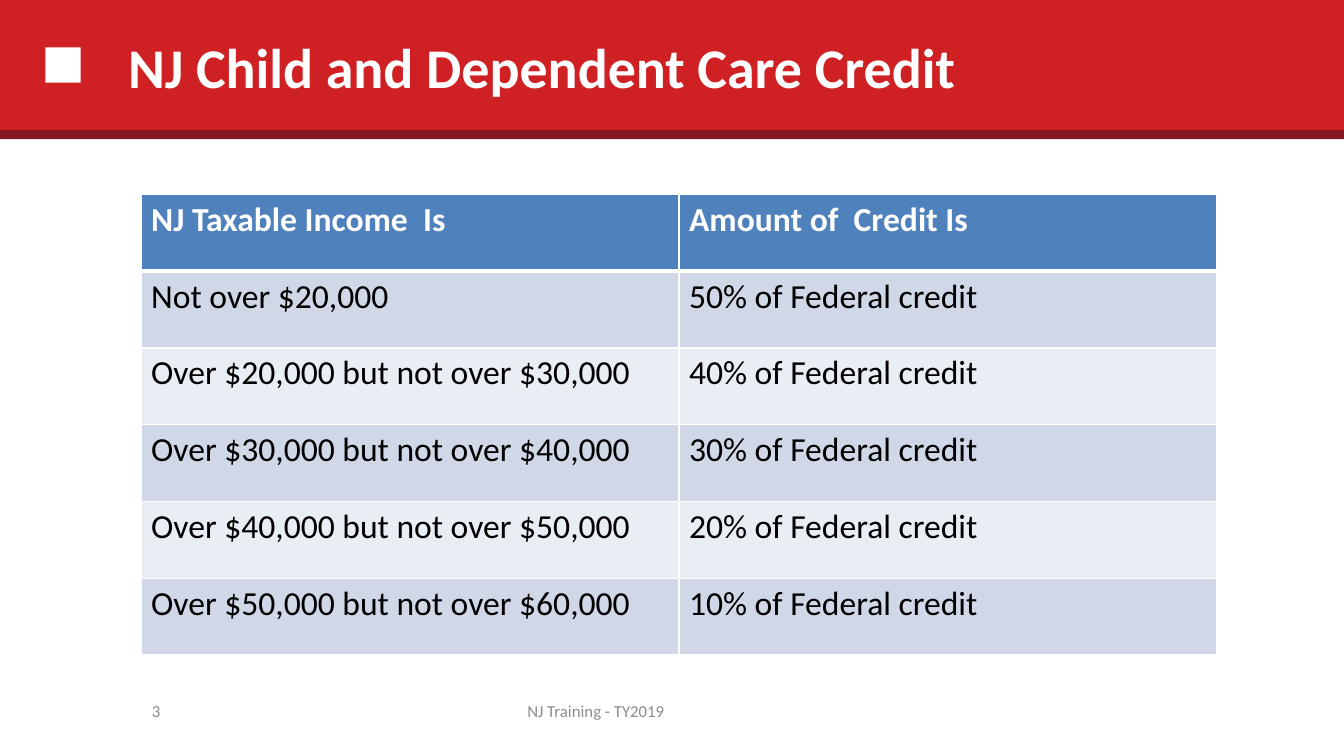
"""Build the NJ child and dependent care credit slide."""
from dataclasses import dataclass

from lxml.etree import SubElement
from pptx import Presentation
from pptx.dml.color import RGBColor as RGB
from pptx.enum.shapes import MSO_SHAPE as Shape
from pptx.enum.text import MSO_ANCHOR as Anchor, MSO_AUTO_SIZE as AutoSize, PP_ALIGN as Align
from pptx.oxml.ns import qn
from pptx.slide import Slide
from pptx.table import _Cell as Cell
from pptx.text.text import TextFrame
from pptx.util import Inches, Pt


@dataclass(frozen=True)
class Theme:
    font: str = "Calibri"
    red: str = "CF2124"
    dark_red: str = "841721"
    white: str = "FFFFFF"
    black: str = "000000"
    gray: str = "8C8C8C"
    header: str = "4F81BD"
    bands: tuple[str, str] = ("D0D8E8", "E9EDF4")
    title_size: int = 40
    table_size: int = 24
    footer_size: int = 12
    thin_border: int = 1
    thick_border: int = 3


@dataclass(frozen=True)
class Box:
    left: float
    top: float
    width: float
    height: float

    def emu(self) -> tuple[int, int, int, int]:
        return Inches(self.left), Inches(self.top), Inches(self.width), Inches(self.height)


@dataclass(frozen=True)
class Block:
    box: Box
    color: str


@dataclass(frozen=True)
class Footer:
    box: Box
    text: str
    align: Align


THEME = Theme()
BLOCKS = (
    Block(Box(0, -0.01, 13.33, 1.33), THEME.red),
    Block(Box(0.45, 0.47, 0.35, 0.35), THEME.white),
    Block(Box(0, 1.29, 13.33, 0.09), THEME.dark_red),
)
FOOTERS = (
    Footer(Box(3.8, 6.85, 4.22, 0.4), "NJ Training - TY2019", Align.CENTER),
    Footer(Box(0.67, 6.85, 1.02, 0.4), "3", Align.RIGHT),
)
TITLE_BOX = Box(1.17, 0.03, 10.66, 1.25)
TABLE_BOX = Box(1.4, 1.93, 10.67, 4.57)
CREDIT_ROWS = (
    ("NJ Taxable Income  Is", "Amount of  Credit Is"),
    ("Not over $20,000", "50% of Federal credit"),
    ("Over $20,000 but not over $30,000", "40% of Federal credit"),
    ("Over $30,000 but not over $40,000", "30% of Federal credit"),
    ("Over $40,000 but not over $50,000", "20% of Federal credit"),
    ("Over $50,000 but not over $60,000", "10% of Federal credit"),
)


def write(tf: TextFrame, text: str, size: int, color: str,
          bold: bool = False, align: Align = Align.LEFT) -> None:
    tf.text = text
    p = tf.paragraphs[0]
    p.alignment = align
    font = p.runs[0].font
    font.name, font.size, font.bold = THEME.font, Pt(size), bold
    font.color.rgb = RGB.from_string(color)


def add_block(s: Slide, block: Block) -> None:
    sp = s.shapes.add_shape(Shape.RECTANGLE, *block.box.emu())
    sp.shadow.inherit = False
    sp.fill.solid()
    sp.fill.fore_color.rgb = RGB.from_string(block.color)
    sp.line.fill.background()


def add_footer(s: Slide, footer: Footer) -> None:
    tf = s.shapes.add_textbox(*footer.box.emu()).text_frame
    tf.word_wrap = True
    tf.vertical_anchor = Anchor.MIDDLE
    write(tf, footer.text, THEME.footer_size, THEME.gray, align=footer.align)


def set_borders(cell: Cell, top: int, bottom: int) -> None:
    thin = THEME.thin_border
    tc_pr = cell._tc.get_or_add_tcPr()
    for side, width in (("L", thin), ("R", thin), ("T", top), ("B", bottom)):
        ln = SubElement(tc_pr, qn(f"a:ln{side}"), w=str(Pt(width)))
        fill = SubElement(ln, qn("a:solidFill"))
        SubElement(fill, qn("a:srgbClr"), val=THEME.white)


def add_credit_table(s: Slide) -> None:
    frame = s.shapes.add_table(len(CREDIT_ROWS), len(CREDIT_ROWS[0]), *TABLE_BOX.emu())
    thin, thick = THEME.thin_border, THEME.thick_border
    for i, row in enumerate(CREDIT_ROWS):
        is_header = i == 0
        fill = THEME.header if is_header else THEME.bands[(i - 1) % 2]
        color = THEME.white if is_header else THEME.black
        for j, text in enumerate(row):
            cell = frame.table.cell(i, j)
            set_borders(cell, thick if i == 1 else thin, thick if is_header else thin)
            cell.fill.solid()
            cell.fill.fore_color.rgb = RGB.from_string(fill)
            write(cell.text_frame, text, THEME.table_size, color, bold=is_header)


def add_title(s: Slide, text: str) -> None:
    title = s.shapes.title
    title.left, title.top, title.width, title.height = TITLE_BOX.emu()
    tf = title.text_frame
    tf.auto_size = AutoSize.NONE
    tf.vertical_anchor = Anchor.MIDDLE
    write(tf, text, THEME.title_size, THEME.white, bold=True)
    s.shapes.element.append(title.element)


def main() -> None:
    prs = Presentation()
    prs.slide_width, prs.slide_height = Inches(13.33), Inches(7.5)
    s = prs.slides.add_slide(prs.slide_layouts[5])
    for block in BLOCKS:
        add_block(s, block)
    for footer in FOOTERS:
        add_footer(s, footer)
    add_credit_table(s)
    add_title(s, "NJ Child and Dependent Care Credit")
    prs.save("out.pptx")


if __name__ == "__main__":
    main()
